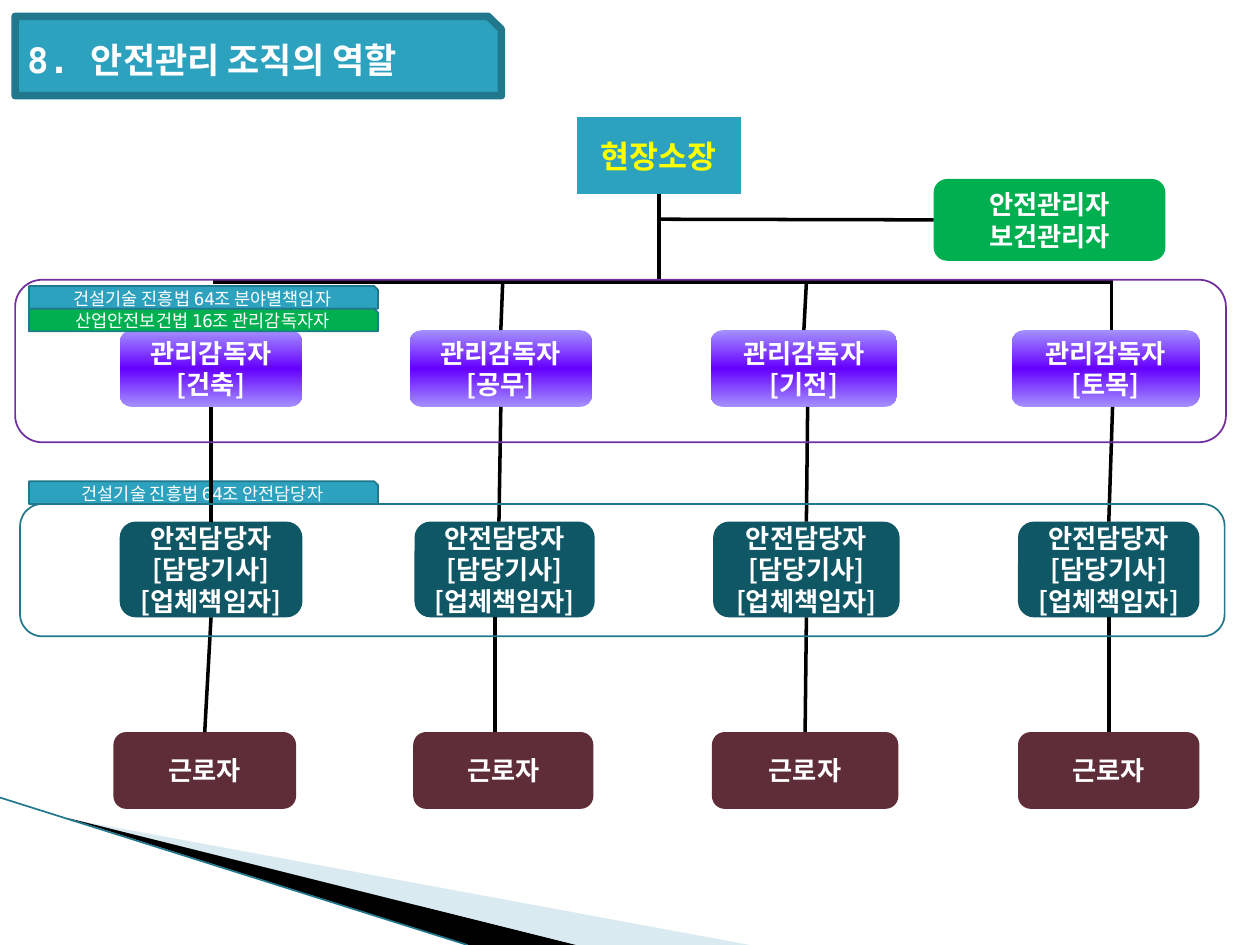
from copy import deepcopy
from dataclasses import dataclass

from lxml.etree import SubElement
from pptx import Presentation
from pptx.dml.color import RGBColor
from pptx.enum.shapes import MSO_CONNECTOR as CONN, MSO_SHAPE as SHAPE
from pptx.enum.text import MSO_ANCHOR as ANCHOR, PP_ALIGN as ALIGN
from pptx.oxml.ns import qn
from pptx.util import Inches, Pt


@dataclass(frozen=True)
class Theme:
    teal: str = "2DA2BF"
    edge: str = "21788D"
    green: str = "00B050"
    violet: tuple = ("A491FF", "6600FF", "A491FF")
    deep: str = "105766"
    wine: str = "5E2D37"
    purple: str = "7030A0"
    pale: str = "A0CBDC"
    black: str = "000000"
    white: str = "FFFFFF"
    yellow: str = "FFFF00"
    korean: str = "Noto Sans CJK KR"
    mono: str = "DejaVu Sans Mono"
    title: int = 20
    chief: int = 18
    box: int = 15
    label: int = 10


T = Theme()

# Content
TITLE = "8. 안전관리 조직의 역할"
CHIEF = "현장소장"
STAFF = "안전관리자\n보건관리자"
FIELDS = ["건축", "공무", "기전", "토목"]
OFFICER = "안전담당자\n[담당기사]\n[업체책임자]"
WORKER = "근로자"
LABELS = [  # text, top, fill
    ("건설기술 진흥법 64조 분야별책임자", 2.27, T.teal),
    ("산업안전보건법 16조 관리감독자자", 2.45, T.green),
    ("건설기술 진흥법 64조 안전담당자", 3.82, T.teal),
]

# Rows of the chart: text per column, (left, width) per column, top, height, fill
ROWS = [
    ([f"관리감독자\n[{f}]" for f in FIELDS],
     [(0.95, 1.45), (3.25, 1.45), (5.64, 1.48), (8.03, 1.49)], 2.62, 0.61, T.violet),
    ([OFFICER] * 4,
     [(0.95, 1.45), (3.29, 1.43), (5.66, 1.48), (8.08, 1.44)], 4.14, 0.76, T.deep),
    ([WORKER] * 4,
     [(0.9, 1.45), (3.28, 1.43), (5.65, 1.48), (8.08, 1.44)], 5.81, 0.61, T.wine),
]
# Line ends (upper x, lower x) per column, between one row and the next
LINKS = [
    [(1.68, 1.67), (3.96, 3.96), (6.41, 6.4), (8.83, 8.82)],
    [(1.65, 1.64), (3.93, 3.93), (6.4, 6.39), (8.82, 8.82)],
]
DROPS = [3.99, 6.4, 8.82]
STEM_X, BUS_Y, STAFF_Y = 5.23, 2.24, 1.74
TOP, LEFT, BOTTOM = 0, 1, 2

prs = Presentation()
prs.slide_width, prs.slide_height = Inches(10), Inches(7.5)
s = prs.slides.add_slide(prs.slide_layouts[6])


def rgb(color):
    return RGBColor.from_string(color)


def paint(sp, fill, line=None, width=1):
    sp.shadow.inherit = False
    if isinstance(fill, tuple):
        sp.fill.gradient()
        first = sp.fill.gradient_stops
        gs = sp._element.spPr.find(".//" + qn("a:gs"))
        gs.addnext(deepcopy(gs))
        for i, (stop, color) in enumerate(zip(sp.fill.gradient_stops, fill)):
            stop.position, stop.color.rgb = i / 2, rgb(color)
        sp.fill.gradient_angle = 270
    elif fill:
        sp.fill.solid()
        sp.fill.fore_color.rgb = rgb(fill)
    else:
        sp.fill.background()
    if line:
        sp.line.color.rgb, sp.line.width = rgb(line), Pt(width)
    else:
        sp.line.fill.background()


def box(kind, at, fill, line=None, width=1):
    sp = s.shapes.add_shape(kind, *map(Inches, at))
    paint(sp, fill, line, width)
    return sp


def write(sp, text, size, font=T.korean, color=T.white, bold=True,
          align=ALIGN.CENTER, wrap=False):
    tf = sp.text_frame
    tf.text, tf.word_wrap, tf.vertical_anchor = text, wrap, ANCHOR.MIDDLE
    tf.margin_top = tf.margin_bottom = 0
    for p in tf.paragraphs:
        p.alignment = align
        for r in p.runs:
            f = r.font
            f.name, f.size, f.bold, f.color.rgb = font, Pt(size), bold, rgb(color)
            SubElement(r._r.get_or_add_rPr(), qn("a:ea"), typeface=T.korean)


def line(x1, y1, x2, y2, color=T.black, width=2):
    c = s.shapes.add_connector(CONN.STRAIGHT, *map(Inches, (x1, y1, x2, y2)))
    c.line.color.rgb, c.line.width = rgb(color), Pt(width)
    SubElement(c._element.spPr, qn("a:effectLst"))
    return c


def at_middle(sp, x):
    return abs(sp.left + sp.width / 2 - Inches(x)) <= Inches(0.025)


def wedge(points, fill):
    fb = s.shapes.build_freeform(*map(Inches, points[0]), scale=1.0)
    fb.add_line_segments([tuple(map(Inches, pt)) for pt in points[1:]], close=True)
    sp = fb.convert_to_shape()
    paint(sp, fill)
    return sp


# Corner decoration
pale = wedge([(0.55, 6.5), (5.95, 7.5), (4.56, 7.5)], T.pale)
SubElement(pale._element.spPr.find(".//" + qn("a:srgbClr")), qn("a:alpha"), val="40000")
wedge([(0.53, 6.49), (4.57, 7.5), (3.72, 7.5)], T.black)
line(0, 6.33, 3.71, 7.5, T.edge, 0.95)

# Boxes
chief = box(SHAPE.RECTANGLE, (4.58, 0.93, 1.3, 0.61), T.teal)
write(chief, CHIEF, T.chief, color=T.yellow)
staff = box(SHAPE.ROUNDED_RECTANGLE, (7.41, 1.42, 1.84, 0.65), T.green)
write(staff, STAFF, T.box)
grid = []
for texts, spans, top, height, fill in ROWS:
    row = []
    for text, (left, width) in zip(texts, spans):
        sp = box(SHAPE.ROUNDED_RECTANGLE, (left, top, width, height), fill)
        write(sp, text, T.box)
        row.append(sp)
    grid.append(row)

# Lines from the chief to the staff and the supervisors
line(STEM_X, STAFF_Y, 7.41, STAFF_Y).end_connect(staff, LEFT)
line(STEM_X, BUS_Y, STEM_X, 1.54).end_connect(chief, BOTTOM)
line(1.69, BUS_Y, 8.83, BUS_Y)
for x, sp in zip(DROPS, grid[0][1:]):
    c = line(x, ROWS[0][2], x, BUS_Y)
    if at_middle(sp, x):
        c.begin_connect(sp, TOP)

# Law labels
for text, top, fill in LABELS:
    sp = box(SHAPE.SNIP_1_RECTANGLE, (0.23, top, 2.77, 0.18), fill, T.edge)
    write(sp, text, T.label, T.mono, bold=False, wrap=True)

# Lines between rows, joined where they meet a side's middle
for i, ends in enumerate(LINKS):
    y1, y2 = ROWS[i][2] + ROWS[i][3], ROWS[i + 1][2]
    for (x1, x2), upper, lower in zip(ends, grid[i], grid[i + 1]):
        c = line(x2, y2, x1, y1)
        if at_middle(lower, x2):
            c.begin_connect(lower, TOP)
        if at_middle(upper, x1):
            c.end_connect(upper, BOTTOM)

# Frames around the rows, and the title
box(SHAPE.ROUNDED_RECTANGLE, (0.16, 4, 9.56, 1.05), None, T.edge)
box(SHAPE.ROUNDED_RECTANGLE, (0.12, 2.22, 9.61, 1.29), None, T.purple)
title = box(SHAPE.SNIP_1_RECTANGLE, (0.12, 0.13, 3.86, 0.63), T.teal, T.edge, 4.33)
write(title, TITLE, T.title, T.mono, align=ALIGN.LEFT, wrap=True)

prs.save("out.pptx")
